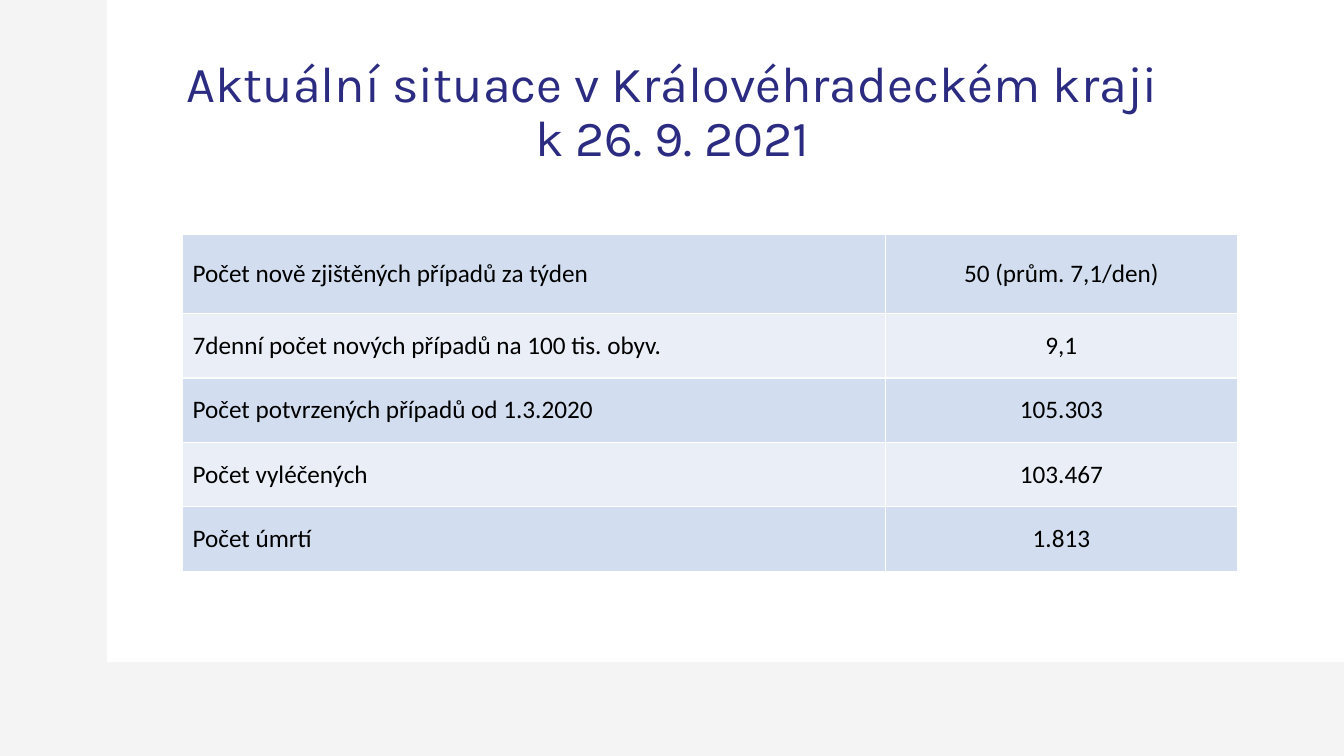
from copy import deepcopy
from dataclasses import dataclass

from lxml.etree import SubElement
from pptx import Presentation
from pptx.dml.color import RGBColor
from pptx.enum.shapes import MSO_SHAPE
from pptx.enum.text import MSO_ANCHOR, MSO_AUTO_SIZE, PP_ALIGN
from pptx.oxml.ns import qn
from pptx.util import Inches, Pt

SLIDE_WIDTH, SLIDE_HEIGHT = Inches(13.33), Inches(7.5)
WHITE, BLACK, NAVY, MARGIN_GRAY = "FFFFFF", "000000", "2B2B82", "F4F4F4"
BANDS = ("D2DEEF", "EAEFF7")
FIRST_ROW, OTHER_ROW = 10.4, 8.53  # row heights in percent of the slide


@dataclass(frozen=True)
class Area:
    """A place on the slide, in percent of its width and height."""
    left: float
    top: float
    width: float
    height: float

    def box(self) -> tuple:
        return (across(self.left), down(self.top),
                across(self.width), down(self.height))


@dataclass(frozen=True)
class Indicator:
    label: str
    value: str


PANEL = Area(7.95, 0, 92.05, 87.6)
HEADING = Area(6.9, 5.33, 86.27, 19.33)
FIGURES = Area(13.58, 31.07, 78.47, FIRST_ROW + 4 * OTHER_ROW)

INDICATORS = [
    Indicator("Počet nově zjištěných případů za týden", "50 (prům. 7,1/den)"),
    Indicator("7denní počet nových případů na 100 tis. obyv.", "9,1"),
    Indicator("Počet potvrzených případů od 1.3.2020", "105.303"),
    Indicator("Počet vyléčených", "103.467"),
    Indicator("Počet úmrtí", "1.813"),
]


def across(percent: float) -> int:
    return round(SLIDE_WIDTH * percent / 100)


def down(percent: float) -> int:
    return round(SLIDE_HEIGHT * percent / 100)


def paint(fill, color: str) -> None:
    fill.solid()
    fill.fore_color.rgb = RGBColor.from_string(color)


def write(frame, text: str, *, font: str = "Calibri", size: float = 18,
          color: str = BLACK, align=PP_ALIGN.LEFT, spacing: float = 1.0) -> None:
    paragraph = frame.paragraphs[0]
    paragraph.text = text
    paragraph.alignment = align
    paragraph.line_spacing = spacing
    for run in paragraph.runs:
        run.font.name = font
        run.font.size = Pt(size)
        run.font.bold = False
        run.font.color.rgb = RGBColor.from_string(color)
    # Line breaks take the format of the text around them
    for line_break in paragraph._p.findall(qn("a:br")):
        line_break.insert(0, deepcopy(paragraph.runs[0]._r.rPr))


def outline_cell(cell, color: str, width: float) -> None:
    properties = cell._tc.get_or_add_tcPr()
    for side in ("a:lnL", "a:lnR", "a:lnT", "a:lnB"):
        line = SubElement(properties, qn(side), w=str(Pt(width)))
        solid = SubElement(line, qn("a:solidFill"))
        SubElement(solid, qn("a:srgbClr"), val=color)


def add_panel(slide) -> None:
    panel = slide.shapes.add_shape(MSO_SHAPE.RECTANGLE, *PANEL.box())
    panel.shadow.inherit = False
    paint(panel.fill, WHITE)
    panel.line.fill.background()
    # The panel lies behind the title
    slide.shapes._spTree.insert(2, panel._element)


def add_heading(slide) -> None:
    title = slide.shapes.title
    title.left, title.top, title.width, title.height = HEADING.box()
    frame = title.text_frame
    frame.word_wrap = True
    frame.auto_size = MSO_AUTO_SIZE.NONE
    frame.vertical_anchor = MSO_ANCHOR.MIDDLE
    write(frame, "Aktuální situace v Královéhradeckém kraji\vk 26. 9. 2021",
          font="Karla", size=36, color=NAVY, align=PP_ALIGN.CENTER, spacing=0.9)


def add_figures(slide) -> None:
    table = slide.shapes.add_table(len(INDICATORS), 2, *FIGURES.box()).table
    table.first_row = table.horz_banding = False
    for column, share in zip(table.columns, (2, 1)):
        column.width = across(FIGURES.width * share / 3)
    for index, indicator in enumerate(INDICATORS):
        table.rows[index].height = down(OTHER_ROW if index else FIRST_ROW)
        entries = ((indicator.label, PP_ALIGN.LEFT),
                   (indicator.value, PP_ALIGN.CENTER))
        for position, (text, align) in enumerate(entries):
            cell = table.cell(index, position)
            outline_cell(cell, WHITE, 1)
            paint(cell.fill, BANDS[index % 2])
            cell.vertical_anchor = MSO_ANCHOR.MIDDLE
            write(cell.text_frame, text, align=align)


def main() -> None:
    presentation = Presentation()
    presentation.slide_width = SLIDE_WIDTH
    presentation.slide_height = SLIDE_HEIGHT
    slide = presentation.slides.add_slide(presentation.slide_layouts[5])
    paint(slide.background.fill, MARGIN_GRAY)
    add_panel(slide)
    add_heading(slide)
    add_figures(slide)
    presentation.save("out.pptx")


if __name__ == "__main__":
    main()
